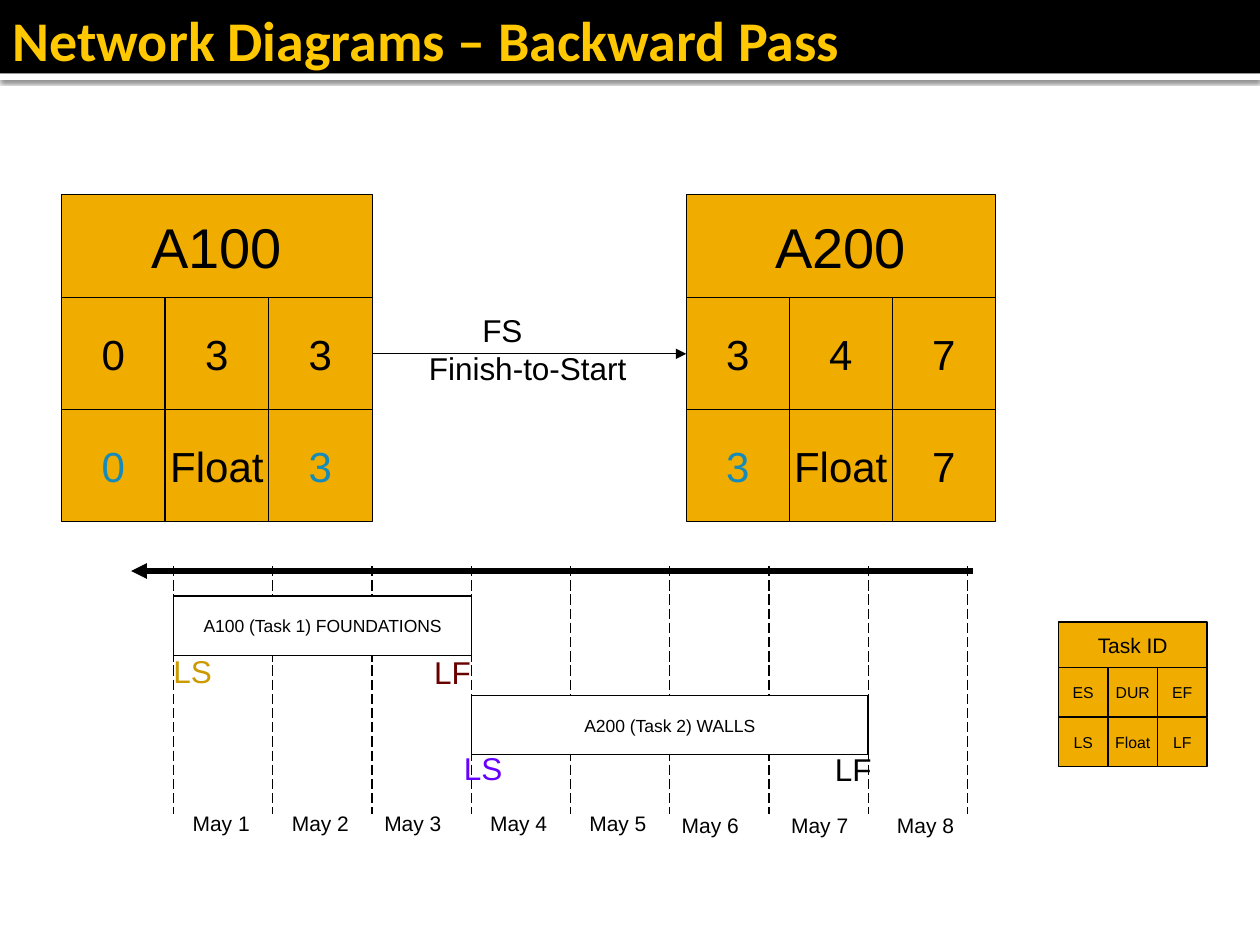
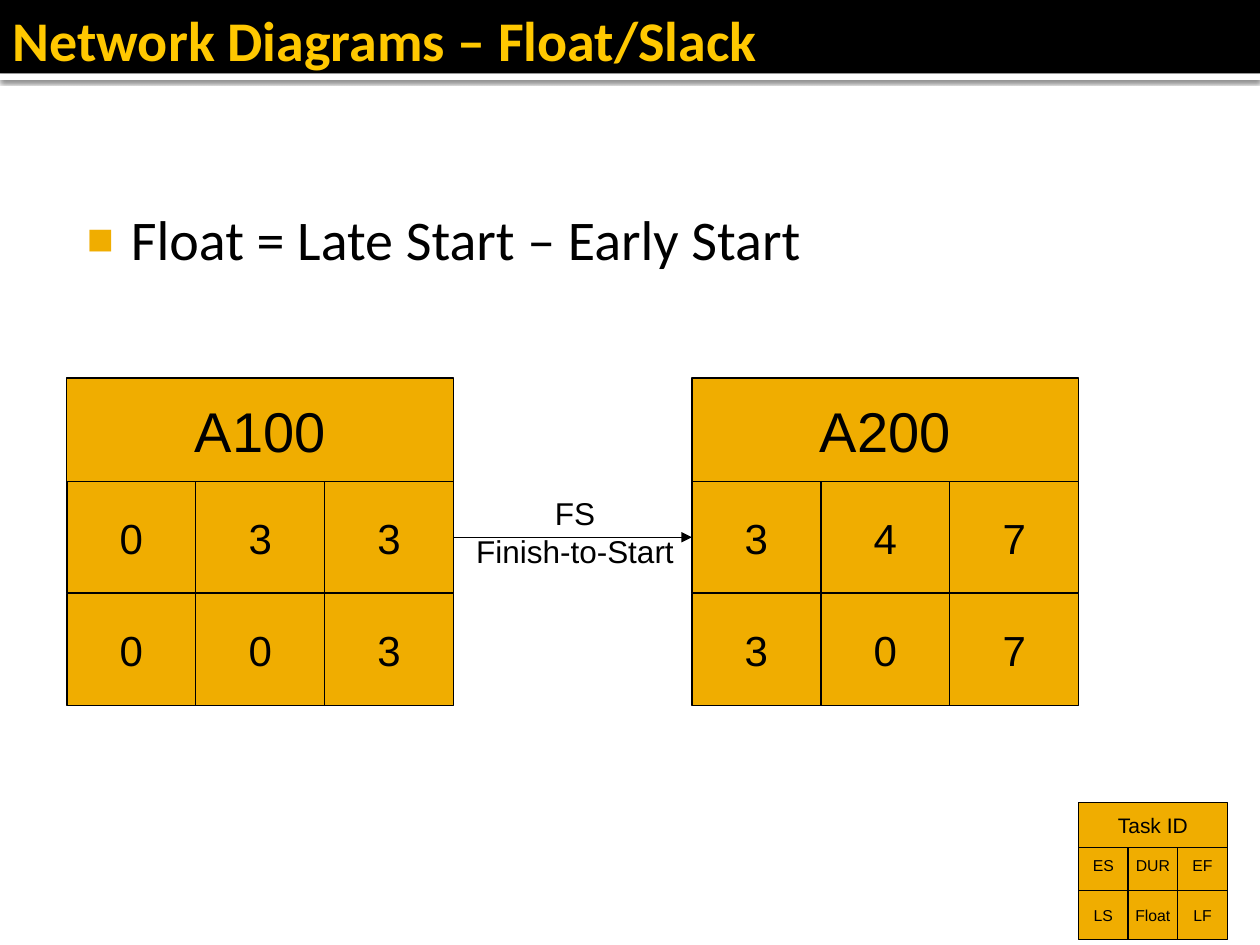
"""Build two slides on network diagrams: backward pass and float."""
from lxml import etree
from pptx import Presentation
from pptx import util as u
from pptx.dml import color
from pptx.enum import dml, shapes, text
from pptx.oxml import ns

BLACK, WHITE, GOLD, BLUE = "000000", "FFFFFF", "F0AD00", "168BBA"
TITLE = "FFC800"
KEY = ["Task ID", "ES", "DUR", "EF", "LS", "Float", "LF"]
HEAD, ROW = 59, 64
GRID, DAY = 99.2, 56.7


def rgb(code):
    return color.RGBColor.from_string(code)


def box(*pts):
    return [u.Pt(p) for p in pts]


def sub(parent, tag, **attrs):
    node = etree.SubElement(parent, ns.qn("a:" + tag))
    for key, val in attrs.items():
        node.set(key, str(val))
    return node


def write(frame, words, size=18, ink=BLACK, font="Arial", bold=False,
          align=text.PP_ALIGN.LEFT, anchor=text.MSO_ANCHOR.TOP,
          wrap=False, pad=(7.2, 3.6, 7.2, 3.6), fit=text.MSO_AUTO_SIZE.NONE):
    frame.word_wrap = wrap
    frame.auto_size = fit
    frame.vertical_anchor = anchor
    (frame.margin_left, frame.margin_top,
     frame.margin_right, frame.margin_bottom) = box(*pad)
    para = frame.paragraphs[0]
    para.alignment = align
    run = para.add_run()
    run.text = words
    run.font.size = u.Pt(size)
    run.font.name = font
    run.font.bold = bold
    run.font.color.rgb = rgb(ink)
    return para


def rect(parent, x, y, w, h, fill=GOLD, edge=BLACK):
    shape = parent.shapes.add_shape(shapes.MSO_SHAPE.RECTANGLE, *box(x, y, w, h))
    shape.shadow.inherit = False
    shape.fill.solid()
    shape.fill.fore_color.rgb = rgb(fill)
    if edge:
        shape.line.color.rgb = rgb(edge)
        shape.line.width = u.Pt(0.75)
    else:
        shape.line.fill.background()
    return shape


def cell(parent, words, x, y, w, h, size, ink=BLACK, fill=GOLD):
    shape = rect(parent, x, y, w, h, fill)
    write(shape.text_frame, words, size=size, ink=ink,
          align=text.PP_ALIGN.CENTER, anchor=text.MSO_ANCHOR.MIDDLE)


def label(slide, words, x, y, w, h=29, **fmt):
    frame = slide.shapes.add_textbox(*box(x, y, w, h)).text_frame
    write(frame, words, fit=text.MSO_AUTO_SIZE.SHAPE_TO_FIT_TEXT, **fmt)


def line(slide, x1, y1, x2, y2, width=0.75, dash=None, tip=None):
    wire = slide.shapes.add_connector(shapes.MSO_CONNECTOR.STRAIGHT, *box(x1, y1, x2, y2))
    wire.line.color.rgb = rgb(BLACK)
    wire.line.width = u.Pt(width)
    if dash:
        wire.line.dash_style = dash
    if tip:
        sub(wire.line._get_or_add_ln(), tip, type="triangle")
    sub(wire.element.spPr, "effectLst")


def card(slide, words, x, y, w, head=HEAD, row=ROW, sizes=(32, 24), late=(), lap=0):
    """Draw a task card: a head over two rows of three; late lists the blue cells."""
    group = slide.shapes.add_group_shape()
    for i, word in enumerate(words[1:]):
        cell(group, word, x + i % 3 * w / 3, y + head - lap + i // 3 * row,
             w / 3, row, sizes[1], BLUE if i in late else BLACK)
    cell(group, words[0], x, y, w, head, sizes[0])


def key(slide, x, y, lap=0):
    card(slide, KEY, x, y, 85, 26, 28.35, (12, 9), lap=lap)


def link(slide, x1, x2, top, short, full):
    """Join two cards by an arrow, with its short and full name at the given lefts."""
    mid = top + HEAD + ROW / 2
    line(slide, x1, mid, x2, mid, tip="tailEnd")
    label(slide, "FS", short, mid - 28, 37.5)
    label(slide, "Finish-to-Start", full, mid - 6.5, 127.5)


def bands(deck, slide):
    """Put the title bands on the master."""
    white = rect(slide, 0, 42, 720, 3.6, WHITE, None)
    glow = sub(white.element.spPr.find(ns.qn("a:effectLst")), "outerShdw",
               blurRad=u.Pt(2.5), dist=u.Pt(0.8), dir=5400000, algn="tl")
    sub(sub(glow, "srgbClr", val=BLACK), "alpha", val=60000)
    black = rect(slide, 0, 0, 720, 42, BLACK, None)
    tree = deck.slide_master.shapes.element
    for spot, band in enumerate((white, black), 2):
        tree.insert(spot, band.element)


def page(deck, layout, words):
    slide = deck.slides.add_slide(deck.slide_layouts[layout])
    title = slide.shapes.title
    title.left, title.top, title.width, title.height = box(0, 0, 720, 44.6)
    write(title.text_frame, words, size=32, ink=TITLE, font="Calibri", bold=True,
          anchor=text.MSO_ANCHOR.MIDDLE, wrap=True, pad=(7.2, 3.6, 3.6, 3.6))
    return slide


def bullet(slide, words):
    body = slide.placeholders[1]
    body.left, body.top, body.width, body.height = box(36, 113.8, 648, 364.3)
    para = write(body.text_frame, words, size=32, font="Calibri",
                 wrap=True, pad=(4.3, 7.2, 7.2, 3.6))
    para.line_spacing = 0.9
    para.space_before = u.Pt(0)
    props = para._p.get_or_add_pPr()
    props.set("marL", str(u.Pt(34.5)))
    props.set("indent", str(u.Pt(-25.2)))
    sub(sub(props, "buClr"), "srgbClr", val=GOLD)
    sub(props, "buSzPct", val=80000)
    sub(props, "buFont", typeface="Arial")
    sub(props, "buChar", char="■")


def chart(slide):
    """Draw the day grid with its task bars, marks and day names."""
    for i in range(9):
        x = GRID + i * DAY
        line(slide, x, 323.5, x, 465, dash=dml.MSO_LINE.LONG_DASH)
    bars = [("A100 (Task 1) FOUNDATIONS", 0, 3, 340.5),
            ("A200 (Task 2) WALLS", 3, 4, 397.3)]
    for words, start, days, y in bars:
        cell(slide, words, GRID + start * DAY, y, days * DAY, 34, 10, fill=WHITE)
    lefts = [103, 159.7, 212.5, 273, 329.7, 382.5, 445, 505.5]
    for day, x in enumerate(lefts, 1):
        label(slide, f"May {day}", x, 459.5 if day < 6 else 460.8, 47.5, 21.8, size=12)
    marks = [("LS", 92, 368.8, "CC9900"), ("LF", 241, 369.5, "680000"),
             ("LS", 258, 424.5, "6600FF"), ("LF", 470, 425, BLACK)]
    for words, x, y, ink in marks:
        label(slide, words, x, y, 37, ink=ink)
    line(slide, 75, 326.3, 556, 326.3, width=3, tip="headEnd")


def main():
    deck = Presentation()
    deck.slide_width, deck.slide_height = box(720, 540)

    back = page(deck, 5, "Network Diagrams – Backward Pass")
    bands(deck, back)
    key(back, 604.8, 355.5)
    card(back, ["A100", "0", "3", "3", "0", "Float", "3"], 35.2, 111.2, 177.5, late=(3, 5))
    card(back, ["A200", "3", "4", "7", "3", "Float", "7"], 392.2, 111.2, 176.5, late=(3,))
    link(back, 212.7, 392.2, 111.2, 268.5, 238)
    chart(back)

    slack = page(deck, 1, "Network Diagrams – Float/Slack")
    bullet(slack, "Float = Late Start – Early Start")
    card(slack, ["A100", "0", "3", "3", "0", "0", "3"], 38.2, 216, 221)
    card(slack, ["A200", "3", "4", "7", "3", "0", "7"], 395.4, 216, 221)
    link(slack, 259.2, 395.4, 216, 310, 265)
    key(slack, 616.3, 458.4, lap=4)

    deck.save("out.pptx")


if __name__ == "__main__":
    main()
